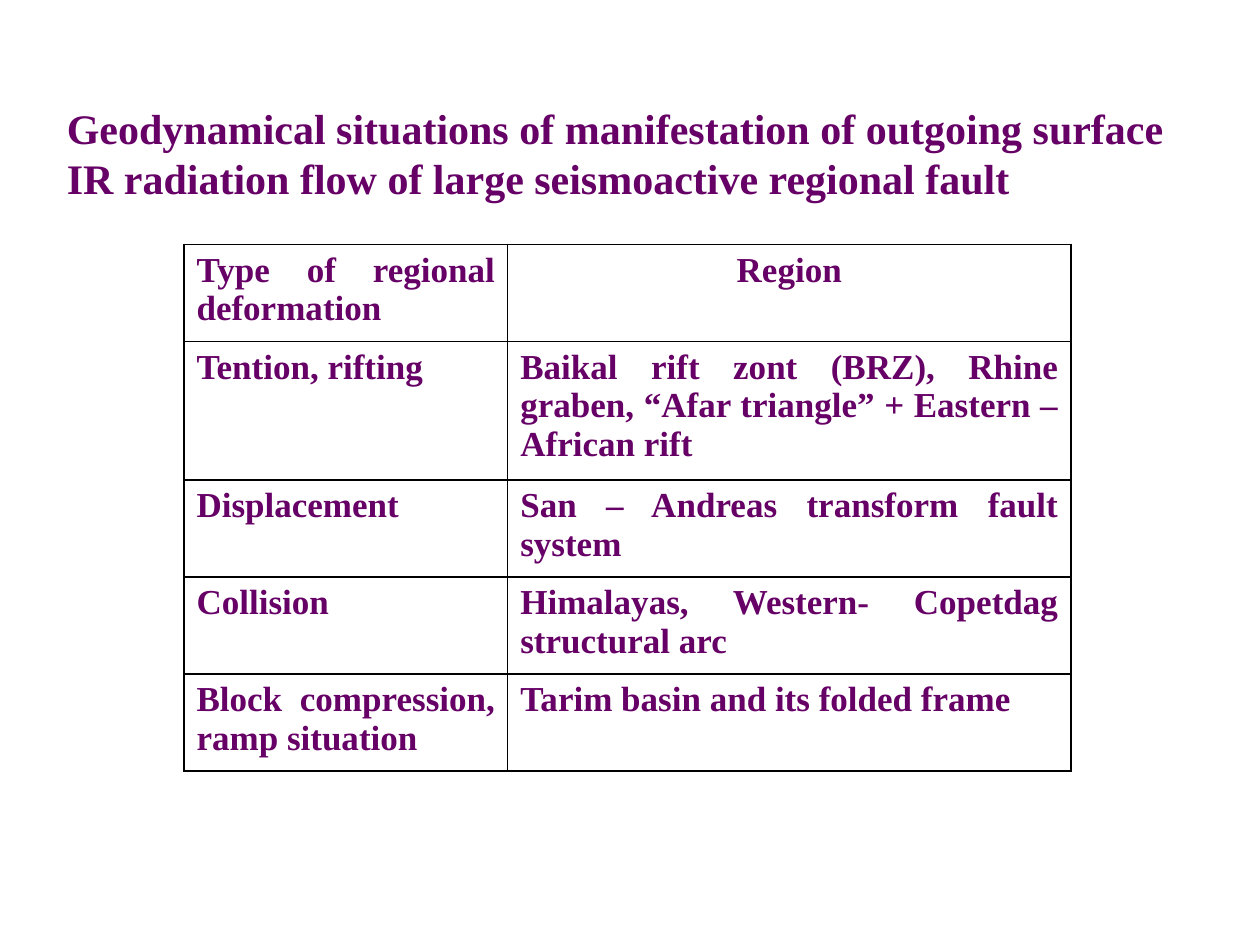
from lxml import etree
from pptx import Presentation
from pptx.dml.color import RGBColor
from pptx.enum import text
from pptx.oxml import ns
from pptx.util import Inches, Pt

ROWS = [
    ("Type of regional deformation", "Region"),
    ("Tention, rifting",
     "Baikal rift zont (BRZ), Rhine graben, “Afar triangle” + Eastern – African rift"),
    ("Displacement", "San – Andreas transform fault system"),
    ("Collision", "Himalayas, Western- Copetdag structural arc"),
    ("Block compression, ramp situation", "Tarim basin and its folded frame"),
]
COLUMN_WIDTHS = [2.57, 4.47]
ROW_HEIGHTS = [0.77, 1.1, 0.77, 0.77, 0.77]


def color(value):
    return RGBColor.from_string(value)


def write(frame, words, size, align, font="Times New Roman", ink="660066", bold=True):
    para = frame.paragraphs[0]
    para.alignment = align
    span = para.add_run()
    span.text = words
    span.font.name = font
    span.font.size = Pt(size)
    span.font.bold = bold
    span.font.color.rgb = color(ink)


def add_borders(cell, ink="000000", width=1):
    props = cell._tc.get_or_add_tcPr()
    for index, side in enumerate(("lnL", "lnR", "lnT", "lnB")):
        line = etree.Element(ns.qn(f"a:{side}"), w=str(Pt(width)))
        fill = etree.SubElement(line, ns.qn("a:solidFill"))
        etree.SubElement(fill, ns.qn("a:srgbClr"), val=ink)
        props.insert(index, line)


class SlideBuilder:
    def __init__(self, deck):
        self.slide = deck.slides.add_slide(deck.slide_layouts[5])

    def title(self, words, left, top, width, height):
        box = self.slide.shapes.title
        box.left, box.top = Inches(left), Inches(top)
        box.width, box.height = Inches(width), Inches(height)
        frame = box.text_frame
        frame.word_wrap = True
        frame.auto_size = text.MSO_AUTO_SIZE.NONE
        frame.vertical_anchor = text.MSO_ANCHOR.TOP
        write(frame, words, 24, text.PP_ALIGN.LEFT)

    def table(self, rows, left, top, widths, heights):
        table = self.slide.shapes.add_table(
            len(rows), len(widths), Inches(left), Inches(top),
            Inches(sum(widths)), Inches(sum(heights))).table
        table.first_row = table.horz_banding = False
        for column, width in zip(table.columns, widths):
            column.width = Inches(width)
        for row, height in zip(table.rows, heights):
            row.height = Inches(height)
        for r, row in enumerate(rows):
            for c, words in enumerate(row):
                cell = table.cell(r, c)
                cell.fill.background()
                add_borders(cell)
                centered = (r, c) == (0, 1)
                align = text.PP_ALIGN.CENTER if centered else text.PP_ALIGN.JUSTIFY
                write(cell.text_frame, words, 20, align)


def main():
    deck = Presentation()
    deck.slide_width, deck.slide_height = Inches(10), Inches(7.5)
    page = SlideBuilder(deck)
    page.table(ROWS, 1.46, 1.94, COLUMN_WIDTHS, ROW_HEIGHTS)
    page.title("Geodynamical situations of manifestation of outgoing surface "
               "IR radiation flow of large seismoactive regional fault",
               0.43, 0.76, 9.06, 0.9)
    deck.save("out.pptx")


if __name__ == "__main__":
    main()
